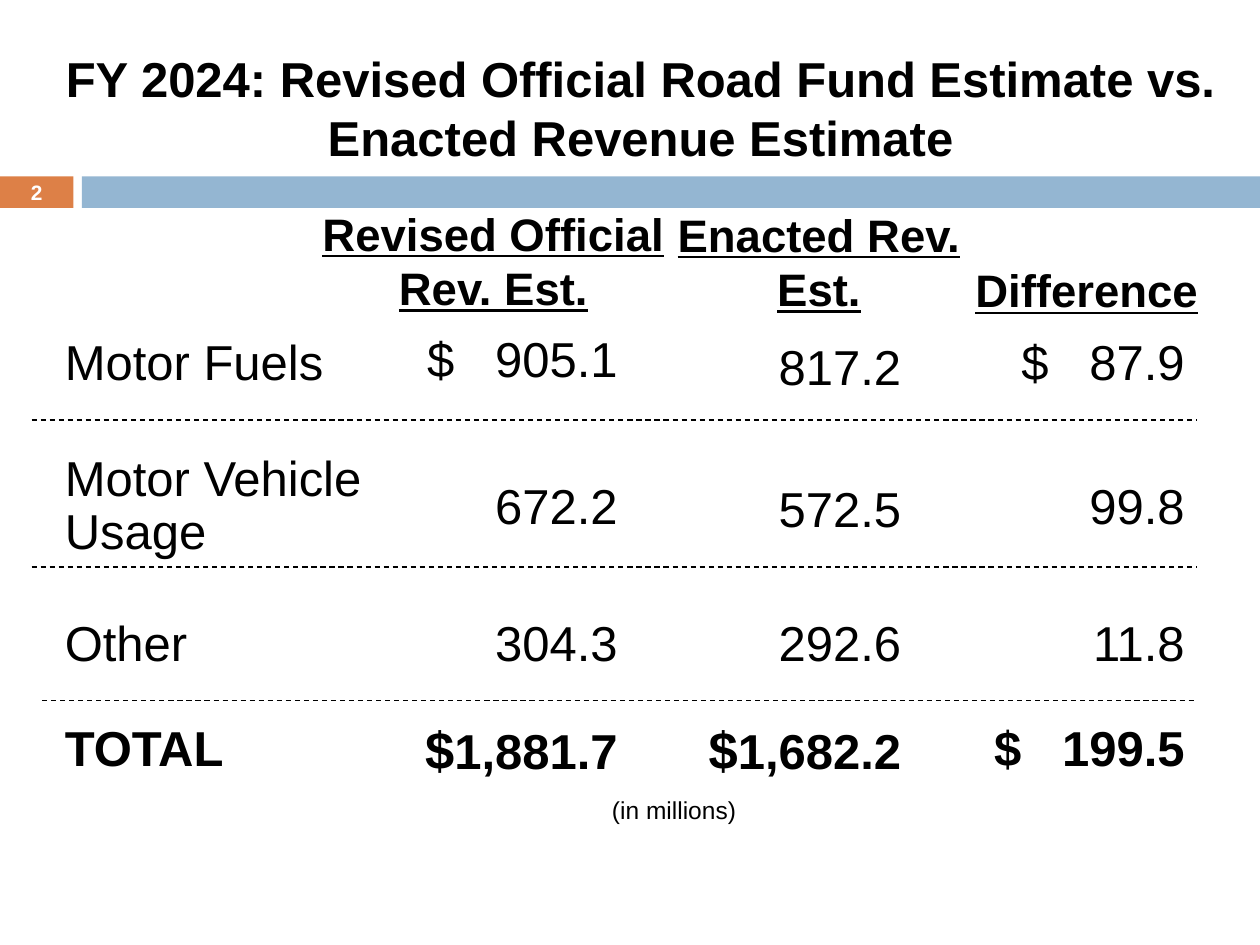
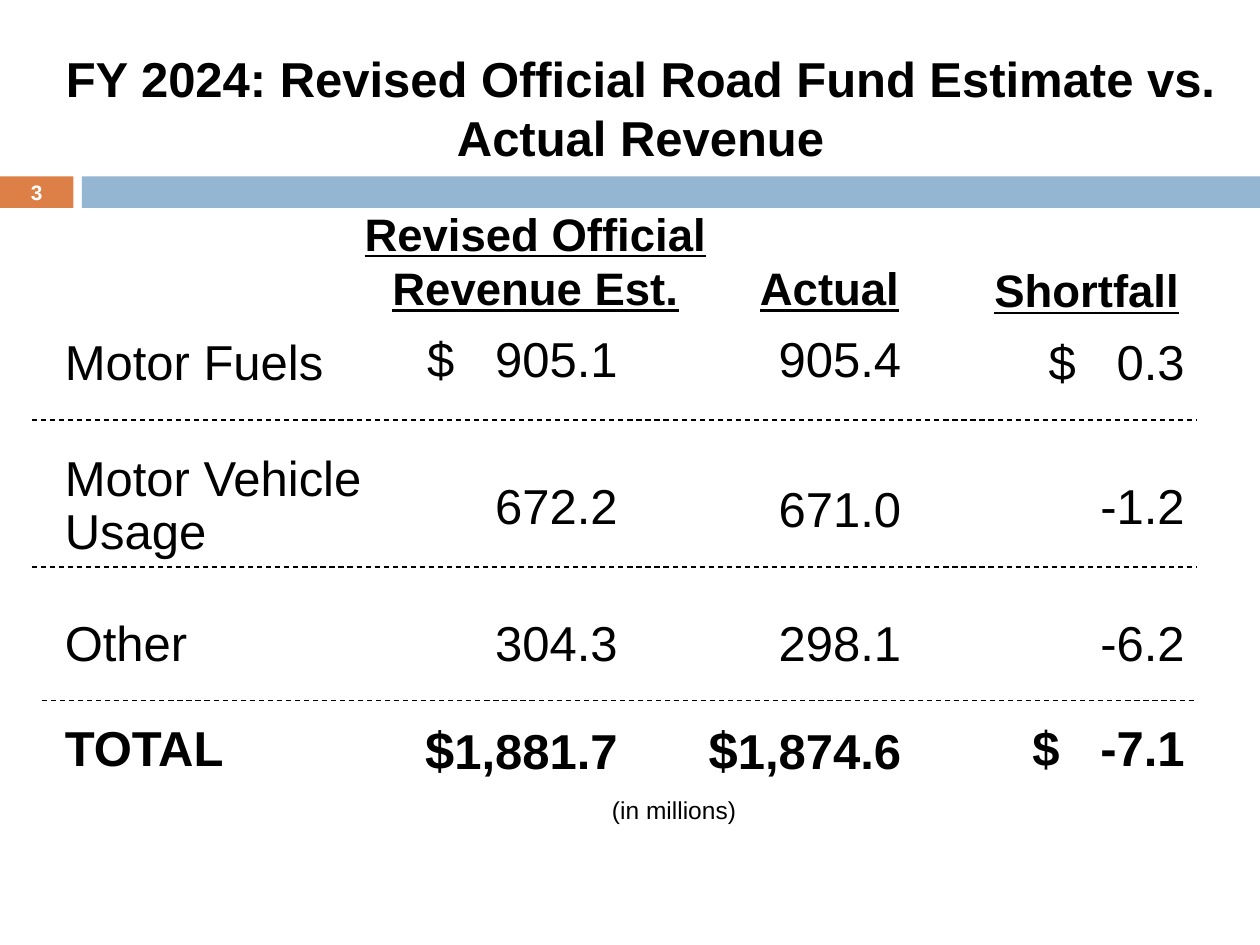
import pptx
import pptx.dml.color
import pptx.enum.dml
import pptx.enum.shapes
import pptx.enum.text
import pptx.util
import lxml.etree

PX = 7620
COLORS = {"text": "000000", "number": "FFFFFF", "accent": "DD8047", "band": "94B6D2"}
FONT = "Arial"
BODY, HEADING, NOTE, NUMBER = 28, 26, 14, 11.9
TOTAL_SIGN = 30
SIGN_GAP = 1556
ALIGN = pptx.enum.text.PP_ALIGN
ANCHOR = pptx.enum.text.MSO_ANCHOR

LABELS = [("Motor Fuels", 310), ("Motor Vehicle\nUsage", 427), ("Other", 577), ("TOTAL", 677)]
RULES = [(30, 400), (30, 540), (40, 667)]
RULE_END = 1140
COLUMN_X, COLUMN_STEP, COLUMN_W = 390, 270, 210
REVISED = (["$ 905.1", "672.2", "304.3", "$1,881.7"], [307, 447, 577, 677])

SLIDES = [
    {
        "number": "2",
        "title": "FY 2024: Revised Official Road Fund Estimate vs. Enacted Revenue Estimate",
        "headings": [
            ("Revised Official Rev. Est.", (260, 190, 420, 118)),
            ("Enacted Rev. Est.", (610, 191, 340, 118)),
            ("Difference", (915, 244, 240, 65)),
        ],
        "columns": [
            REVISED,
            (["817.2", "572.5", "292.6", "$1,682.2"], [315, 450, 577, 677]),
            (["$ 87.9", "99.8", "11.8", "$ 199.5"], [310, 447, 577, 677]),
        ],
    },
    {
        "number": "3",
        "title": "FY 2024: Revised Official Road Fund Estimate vs. Actual Revenue",
        "headings": [
            ("Revised Official Revenue Est.", (300, 190, 420, 118)),
            ("Actual", (660, 242, 260, 65)),
            ("Shortfall", (915, 244, 240, 65)),
        ],
        "columns": [
            REVISED,
            (["905.4", "671.0", "298.1", "$1,874.6"], [307, 450, 577, 677]),
            (["$ 0.3", "-1.2", "-6.2", "$ -7.1"], [310, 447, 577, 677]),
        ],
    },
]


def rgb(name):
    return pptx.dml.color.RGBColor.from_string(COLORS[name])


def px(*lengths):
    return [pptx.util.Emu(n * PX) for n in lengths]


class Deck:
    def __init__(self):
        self.prs = pptx.Presentation()
        self.prs.slide_width, self.prs.slide_height = px(1200, 900)
        self.slide = None

    def new_slide(self):
        self.slide = self.prs.slides.add_slide(self.prs.slide_layouts[5])

    def style(self, p, size, align, bold=False, underline=False, color="text"):
        p.alignment = align
        p.font.name = FONT
        p.font.size = pptx.util.Pt(size)
        p.font.bold = bold
        p.font.underline = underline
        p.font.color.rgb = rgb(color)

    def title(self, text, box):
        sp = self.slide.shapes.title
        sp.left, sp.top, sp.width, sp.height = px(*box)
        tf = sp.text_frame
        tf.text = text
        tf.auto_size = pptx.enum.text.MSO_AUTO_SIZE.NONE
        tf.vertical_anchor = ANCHOR.TOP
        self.style(tf.paragraphs[0], BODY, ALIGN.CENTER, bold=True)

    def text(self, text, box, size=BODY, align=ALIGN.CENTER, anchor=ANCHOR.TOP, **font):
        tf = self.slide.shapes.add_textbox(*px(*box)).text_frame
        tf.word_wrap = True
        tf.vertical_anchor = anchor
        p = tf.paragraphs[0]
        p.text = text
        self.style(p, size, align, **font)
        return p

    def amount(self, text, x, y, total):
        p = self.text("", (x, y, COLUMN_W, 68), align=ALIGN.RIGHT, bold=total)
        sign, gap, number = text.rpartition(" ")
        if not gap and text.startswith("$"):
            sign, number = "$", text[1:]
        for part in filter(None, (sign, gap, number)):
            r = p.add_run()
            r.text = part
            if part == " ":
                r._r.get_or_add_rPr().set("spc", str(SIGN_GAP))
            elif part == "$" and not gap:
                r.font.size = pptx.util.Pt(TOTAL_SIGN)

    def band(self, box, color):
        sp = self.slide.shapes.add_shape(pptx.enum.shapes.MSO_SHAPE.RECTANGLE, *px(*box))
        sp.shadow.inherit = False
        sp.fill.solid()
        sp.fill.fore_color.rgb = rgb(color)
        sp.line.fill.background()

    def rule(self, x, y):
        line = self.slide.shapes.add_connector(
            pptx.enum.shapes.MSO_CONNECTOR.STRAIGHT, *px(x, y, RULE_END, y))
        line.line.color.rgb = rgb("text")
        line.line.width = pptx.util.Pt(0.75)
        line.line.dash_style = pptx.enum.dml.MSO_LINE.DASH
        sp_pr = line._element.spPr
        lxml.etree.SubElement(sp_pr, pptx.oxml.ns.qn("a:effectLst"))


def build_slide(deck, data):
    deck.new_slide()
    deck.band((0, 168, 70, 30), "accent")
    deck.band((78, 168, 1122, 30), "band")
    deck.title(data["title"], (20, 40, 1180, 125))
    for label, y in LABELS:
        p = deck.text(label, (50, y, 320, 68), align=ALIGN.LEFT, bold=label == "TOTAL")
        if "\n" in label:
            p.line_spacing = 0.9
    for heading, box in data["headings"]:
        deck.text(heading, box, HEADING, bold=True, underline=True)
    for i, (amounts, tops) in enumerate(data["columns"]):
        for row, (amount, y) in enumerate(zip(amounts, tops)):
            deck.amount(amount, COLUMN_X + i * COLUMN_STEP, y, row == len(amounts) - 1)
    for x, y in RULES:
        deck.rule(x, y)
    deck.text("(in millions)", (482, 751, 320, 41), NOTE)
    deck.text(data["number"], (0, 167, 70, 32), NUMBER, anchor=ANCHOR.MIDDLE,
              bold=True, color="number")


def main():
    deck = Deck()
    for data in SLIDES:
        build_slide(deck, data)
    deck.prs.save("out.pptx")


if __name__ == "__main__":
    main()
